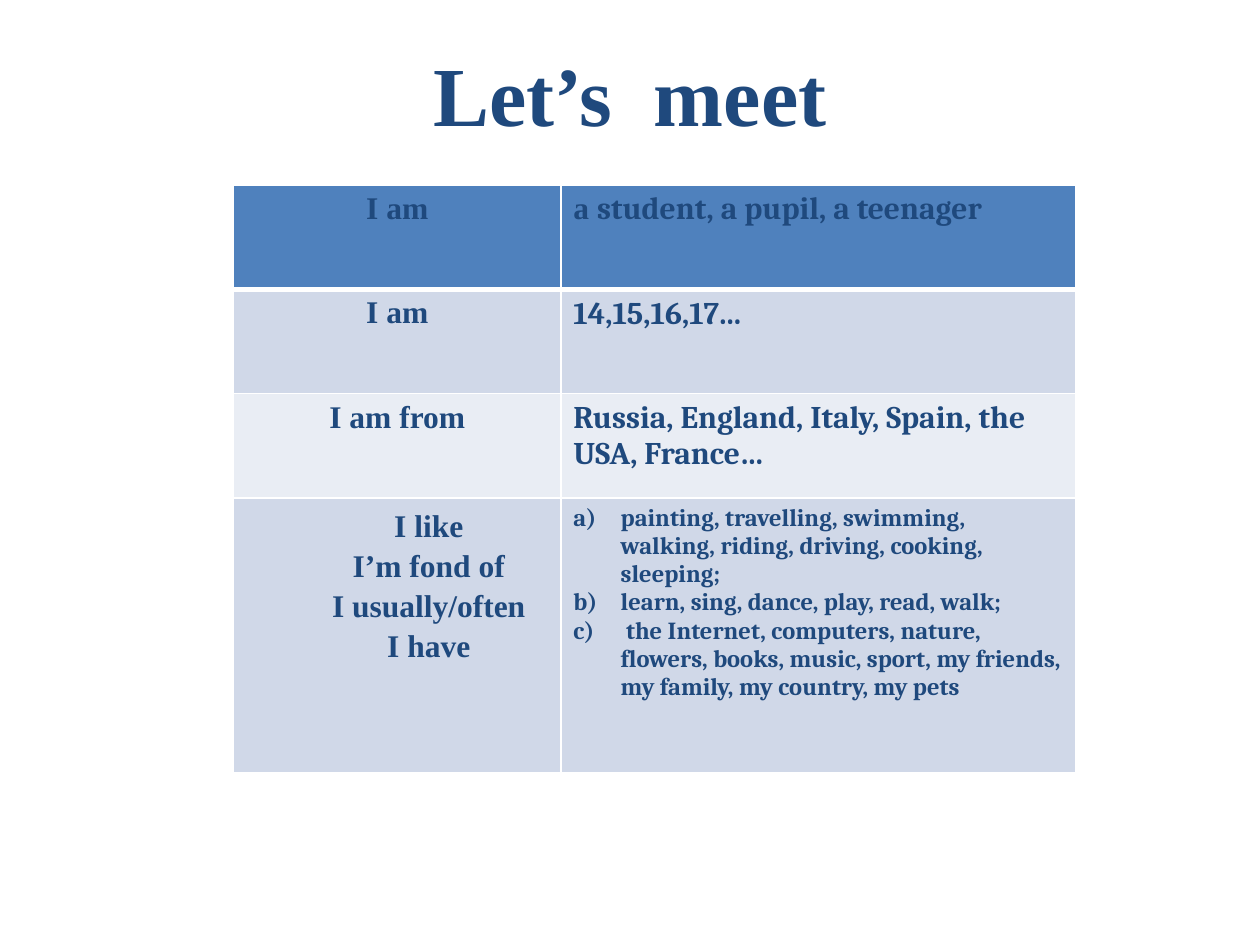
"""Build the "Let's meet" slide with its table of sentence starters."""
from dataclasses import dataclass

from lxml.etree import SubElement
from pptx import Presentation
from pptx.dml.color import RGBColor
from pptx.enum.text import MSO_ANCHOR, PP_ALIGN
from pptx.oxml.ns import qn
from pptx.util import Pt


@dataclass(frozen=True)
class Theme:
    ink: str = "1F497D"
    header: str = "4F81BD"
    dark_band: str = "D0D8E8"
    light_band: str = "E9EDF4"
    border: str = "FFFFFF"
    serif: str = "Times New Roman"
    answer: str = "Cambria"
    title_size: float = 48
    text_size: float = 18
    list_size: float = 14
    thin: float = 1
    thick: float = 3


@dataclass(frozen=True)
class Span:
    text: str
    font: str


@dataclass(frozen=True)
class Entry:
    starters: list[str]
    answers: list[list[Span]]
    fill: str
    height: float
    is_list: bool = False


THEME = Theme()
COLUMN_WIDTHS = (187, 294.5)
ROW_HEIGHT = 59.6
LIST_HEIGHT = 157.2


def answer(text: str) -> list[Span]:
    return [Span(text, THEME.answer)]


ENTRIES = [
    Entry(["I am"],
          [[Span("a ", THEME.serif), Span("student, a pupil, a teenager", THEME.answer)]],
          THEME.header, ROW_HEIGHT),
    Entry(["I am"], [answer("14,15,16,17...")], THEME.dark_band, ROW_HEIGHT),
    Entry(["I am from"], [answer("Russia, England, Italy, Spain, the USA, France…")],
          THEME.light_band, ROW_HEIGHT),
    Entry(["I like", "I’m fond of", "I usually/often", "I have"],
          [answer("painting, travelling, swimming, walking, riding, driving, cooking, sleeping;"),
           answer("learn, sing, dance, play, read, walk;"),
           answer(" the Internet, computers, nature, flowers, books, music, sport, "
                  "my friends, my family, my country, my pets")],
          THEME.dark_band, LIST_HEIGHT, is_list=True),
]


def write(frame, lines: list[list[Span]], *, size: float, align=PP_ALIGN.LEFT,
          margin: float = 0, indent: float = 0, spacing: float | None = None,
          lettered: bool = False) -> None:
    for index, line in enumerate(lines):
        para = frame.add_paragraph() if index else frame.paragraphs[0]
        para.alignment = align
        if spacing:
            para.line_spacing = spacing
        properties = para._p.get_or_add_pPr()
        properties.set("marL", str(Pt(margin)))
        properties.set("indent", str(Pt(indent)))
        if lettered:
            SubElement(properties, qn("a:buAutoNum"), type="alphaLcParenR")
        for span in line:
            run = para.add_run()
            run.text = span.text
            run.font.name = span.font
            run.font.size = Pt(size)
            run.font.bold = True
            run.font.color.rgb = RGBColor.from_string(THEME.ink)


def set_borders(cell, *, top: float, bottom: float) -> None:
    properties = cell._tc.get_or_add_tcPr()
    widths = {"lnL": THEME.thin, "lnR": THEME.thin, "lnT": top, "lnB": bottom}
    for edge, width in widths.items():
        line = SubElement(properties, qn(f"a:{edge}"), w=str(Pt(width)))
        fill = SubElement(line, qn("a:solidFill"))
        SubElement(fill, qn("a:srgbClr"), val=THEME.border)


def draw_title(page, text: str) -> None:
    title = page.shapes.title
    title.left, title.top, title.width, title.height = Pt(56), Pt(16.5), Pt(608), Pt(73.5)
    title.text_frame.vertical_anchor = MSO_ANCHOR.MIDDLE
    write(title.text_frame, [[Span(text, THEME.serif)]],
          size=THEME.title_size, align=PP_ALIGN.CENTER)


def draw_table(page, entries: list[Entry]) -> None:
    table = page.shapes.add_table(
        len(entries), len(COLUMN_WIDTHS), Pt(133.5), Pt(105.8),
        Pt(sum(COLUMN_WIDTHS)), Pt(sum(entry.height for entry in entries))).table
    for column, width in zip(table.columns, COLUMN_WIDTHS):
        column.width = Pt(width)
    for index, entry in enumerate(entries):
        row = table.rows[index]
        row.height = Pt(entry.height)
        for cell in row.cells:
            set_borders(cell, top=THEME.thick if index == 1 else THEME.thin,
                        bottom=THEME.thick if index == 0 else THEME.thin)
            cell.fill.solid()
            cell.fill.fore_color.rgb = RGBColor.from_string(entry.fill)
        starter_cell, answer_cell = row.cells
        write(starter_cell.text_frame, [[Span(text, THEME.serif)] for text in entry.starters],
              size=THEME.text_size, align=PP_ALIGN.CENTER,
              margin=36 if entry.is_list else 0, spacing=1.15 if entry.is_list else None)
        write(answer_cell.text_frame, entry.answers,
              size=THEME.list_size if entry.is_list else THEME.text_size,
              margin=27 if entry.is_list else 0, indent=-27 if entry.is_list else 0,
              lettered=entry.is_list)


def main() -> None:
    deck = Presentation()
    deck.slide_width, deck.slide_height = Pt(720), Pt(540)
    page = deck.slides.add_slide(deck.slide_layouts[5])
    draw_title(page, "Let’s  meet")
    draw_table(page, ENTRIES)
    deck.save("out.pptx")


if __name__ == "__main__":
    main()
